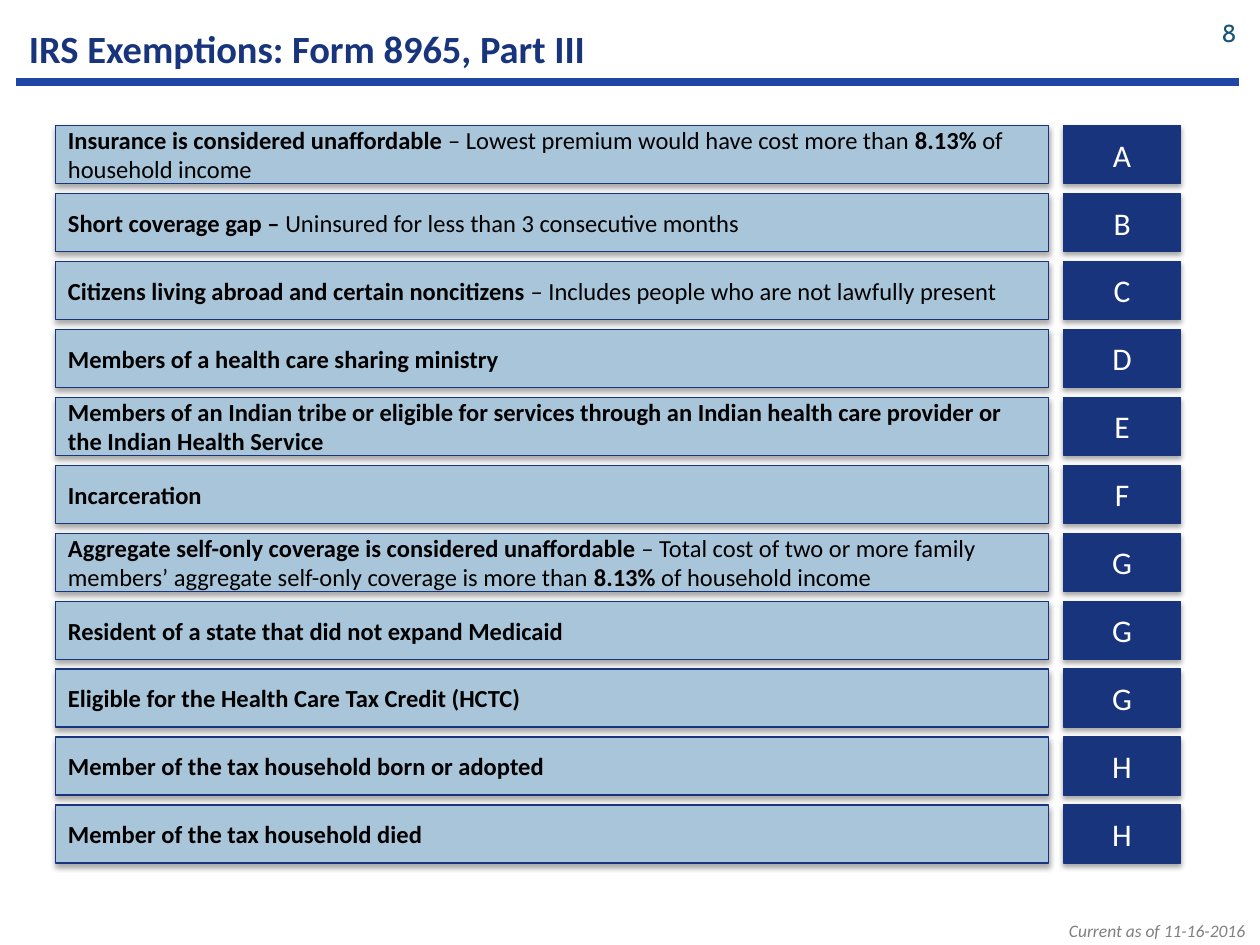
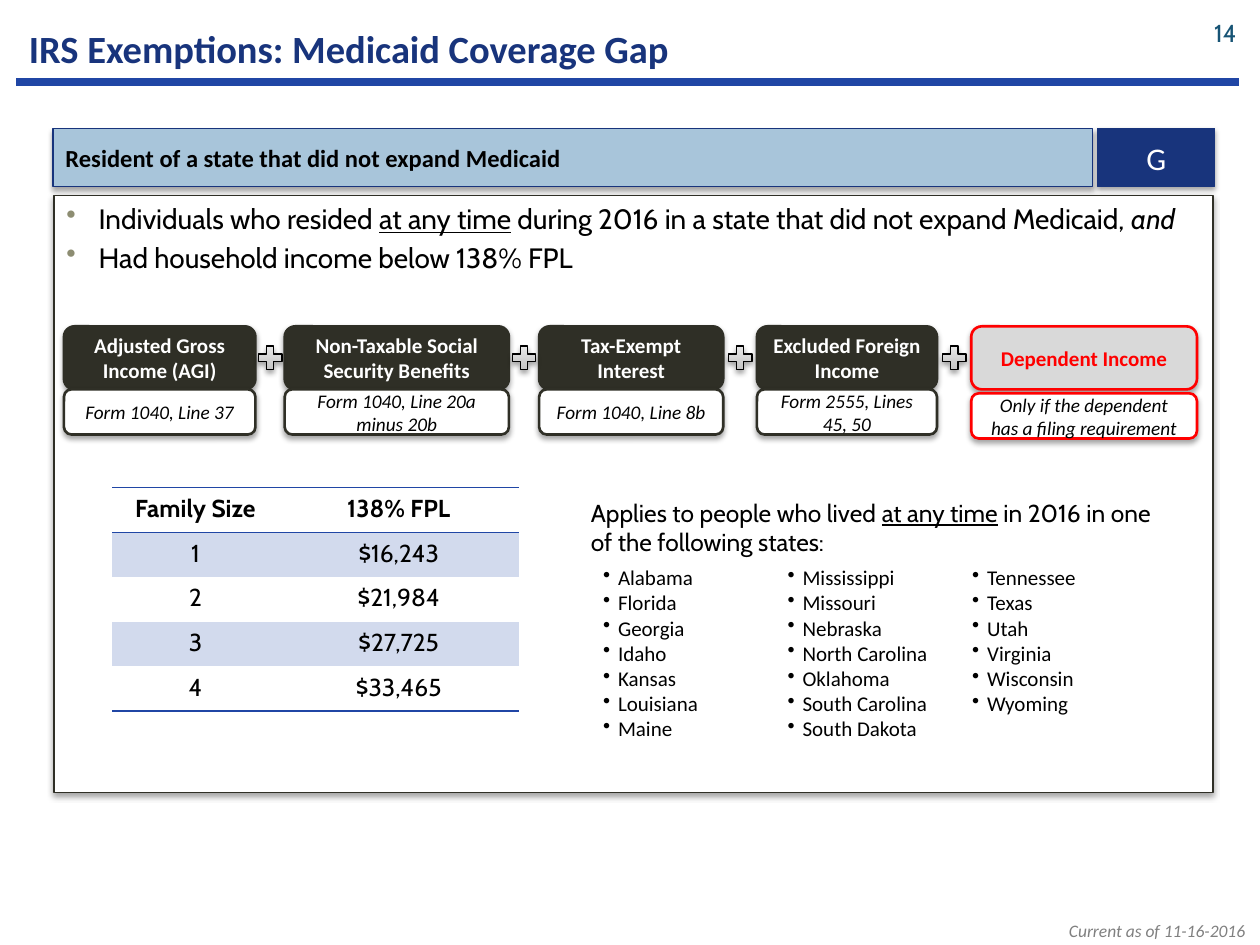
from typing import NamedTuple

from lxml import etree
from pptx import Presentation
from pptx.dml.color import RGBColor
from pptx.enum.shapes import MSO_CONNECTOR, MSO_SHAPE
from pptx.enum.text import MSO_ANCHOR, MSO_AUTO_SIZE, PP_ALIGN
from pptx.oxml.ns import qn
from pptx.util import Cm, Pt

RECTANGLE = MSO_SHAPE.RECTANGLE
ROUNDED = MSO_SHAPE.ROUNDED_RECTANGLE
PLUS = MSO_SHAPE.MATH_PLUS
STRAIGHT = MSO_CONNECTOR.STRAIGHT
LEFT, CENTER, RIGHT = PP_ALIGN.LEFT, PP_ALIGN.CENTER, PP_ALIGN.RIGHT
TOP, MIDDLE = MSO_ANCHOR.TOP, MSO_ANCHOR.MIDDLE
GROW = MSO_AUTO_SIZE.SHAPE_TO_FIT_TEXT

COLORS = {
    "navy": "18347C", "rule": "2046A5", "sky": "A8C5DA", "number": "175475",
    "gray": "808080", "dark": "2F2F26", "black": "000000", "white": "FFFFFF",
    "red": "FF0000", "silver": "D9D9D9", "bullet": "8D8D72", "stripe": "D2DAED",
    "plus_start": "BDBDBD", "plus_end": "EEEEEE",
}
FORMATS = {
    "title": {"name": "Calibri", "size": Pt(22), "bold": True, "color": "navy"},
    "number": {"name": "Cabin", "size": Pt(14), "color": "number"},
    "footer": {"name": "Calibri", "size": Pt(10), "italic": True, "color": "gray"},
    "exemption": {"name": "Calibri", "size": Pt(14), "color": "black"},
    "code": {"name": "Calibri", "size": Pt(18), "color": "white"},
    "criteria": {"name": "Cabin", "size": Pt(16), "color": "black"},
    "income": {"name": "Calibri", "size": Pt(12), "bold": True},
    "source": {"name": "Calibri", "size": Pt(11), "italic": True, "color": "black"},
    "cell": {"name": "Cabin", "size": Pt(14), "color": "black"},
    "states": {"name": "Calibri", "size": Pt(12), "color": "black"},
}
UNDERLINE = {"underline": True}
NO_STYLE = "{2D5ABB26-0587-4C30-8999-92F81FD0307C}"
ROW_HEIGHT, ROW_PITCH, CODE_WIDTH = 1.17, 1.37, 2.36

EXEMPTIONS = [
    ("A", ["Insurance is considered unaffordable ",
           "– Lowest premium would have cost more than ", "8.13%", " of household income"]),
    ("B", ["Short coverage gap – ", "Uninsured for less than 3 consecutive months"]),
    ("C", ["Citizens living abroad and certain noncitizens ",
           "– Includes people who are not lawfully present"]),
    ("D", ["Members of a health care sharing ministry"]),
    ("E", ["Members of an Indian tribe or eligible for services through an Indian "
           "health care provider or the Indian Health Service"]),
    ("F", ["Incarceration"]),
    ("G", ["Aggregate self-only coverage is considered unaffordable ",
           "– Total cost of two or more family members’ aggregate self-only coverage "
           "is more than ", "8.13% ", "of household income"]),
    ("G", ["Resident of a state that did not expand Medicaid"]),
    ("G", ["Eligible for the Health Care Tax Credit (HCTC)"]),
    ("H", ["Member of the tax household born or adopted"]),
    ("H", ["Member of the tax household died"]),
]
INCOMES = [
    (0, 3.86, "Adjusted Gross Income (AGI)", "Form 1040, Line 37"),
    (4.45, 4.52, "Non-Taxable Social Security Benefits", "Form 1040, Line 20a minus 20b"),
    (9.58, 3.71, "Tax-Exempt\nInterest", "Form 1040, Line 8b"),
    (13.97, 3.63, "Excluded Foreign Income", "Form 2555, Lines 45, 50"),
    (18.29, 4.55, "Dependent Income", "Only if the dependent has a filing requirement"),
]
POVERTY_LEVELS = [("Family Size", "138% FPL"), ("1", "$16,243"), ("2", "$21,984"),
                  ("3", "$27,725"), ("4", "$33,465")]
STATES = ["Alabama", "Florida", "Georgia", "Idaho", "Kansas", "Louisiana", "Maine",
          "Mississippi", "Missouri", "Nebraska", "North Carolina", "Oklahoma",
          "South Carolina", "South Dakota", "Tennessee", "Texas", "Utah", "Virginia",
          "Wisconsin", "Wyoming"]


class Box(NamedTuple):
    """A rectangle in centimetres."""
    left: float
    top: float
    width: float
    height: float

    def emu(self):
        """Return the four lengths for python-pptx."""
        return [Cm(length) for length in self]

    def inside(self, left, top, width, height):
        """Return a box offset from this one's corner."""
        return Box(self.left + left, self.top + top, width, height)


def rgb(name):
    """Look up a named colour."""
    return RGBColor.from_string(COLORS[name])


def apply_format(font, values):
    """Set font attributes from a dict of format values."""
    for name, value in values.items():
        if name == "color":
            font.color.rgb = rgb(value)
        else:
            setattr(font, name, value)


def write(frame, paragraphs, values, align=LEFT, anchor=MIDDLE):
    """Fill a text frame with paragraphs of (text, overrides) runs."""
    frame.word_wrap = True
    frame.vertical_anchor = anchor
    for index, runs in enumerate(paragraphs):
        paragraph = frame.add_paragraph() if index else frame.paragraphs[0]
        paragraph.alignment = align
        for text, overrides in runs:
            run = paragraph.add_run()
            run.text = text
            apply_format(run.font, {**values, **overrides})


def plain(text):
    """Turn lines of text into unstyled paragraphs."""
    return [[(line, {})] for line in text.split("\n")]


def add_bullets(frame, indent, color=None):
    """Give every paragraph a hanging round bullet."""
    for paragraph in frame.paragraphs:
        properties = paragraph._p.get_or_add_pPr()
        properties.set("marL", str(Cm(indent)))
        properties.set("indent", str(-Cm(indent)))
        if color:
            bullet_color = etree.SubElement(properties, qn("a:buClr"))
            etree.SubElement(bullet_color, qn("a:srgbClr"), val=COLORS[color])
        etree.SubElement(properties, qn("a:buChar"), char="•")


def add_text(slide, box, paragraphs, values, align=LEFT, anchor=TOP):
    """Add a text box and return its frame."""
    frame = slide.shapes.add_textbox(*box.emu()).text_frame
    write(frame, paragraphs, values, align, anchor)
    return frame


def add_block(slide, kind, box, fill, line, weight):
    """Add an outlined shape with a soft shadow below it."""
    shape = slide.shapes.add_shape(kind, *box.emu())
    if fill:
        shape.fill.solid()
        shape.fill.fore_color.rgb = rgb(fill)
    shape.line.color.rgb = rgb(line)
    shape.line.width = Pt(weight)
    shape.shadow.inherit = False
    effects = shape._element.spPr.find(qn("a:effectLst"))
    shadow = etree.SubElement(effects, qn("a:outerShdw"), blurRad=str(Pt(3.1)),
                              dist=str(Pt(1.8)), dir="5400000", rotWithShape="0")
    color = etree.SubElement(shadow, qn("a:srgbClr"), val=COLORS["black"])
    etree.SubElement(color, qn("a:alpha"), val="35000")
    return shape


def add_titled_slide(presentation, title, number):
    """Add a slide with the shared title, rule, number and footer."""
    slide = presentation.slides.add_slide(presentation.slide_layouts[5])
    placeholder = slide.shapes.title
    box = Box(0.33, 0.25, 22.86, 1.45)
    placeholder.left, placeholder.top, placeholder.width, placeholder.height = box.emu()
    write(placeholder.text_frame, plain(title), FORMATS["title"])
    rule = slide.shapes.add_connector(STRAIGHT, Cm(0.33), Cm(1.65), Cm(24.97), Cm(1.65))
    rule.line.color.rgb = rgb("rule")
    rule.line.width = Pt(4.75)
    etree.SubElement(rule._element.spPr, qn("a:effectLst"))
    add_text(slide, Box(23.88, 0.15, 1.3, 1.02), plain(number), FORMATS["number"],
             RIGHT, MIDDLE)
    add_text(slide, Box(15.16, 18.42, 10.19, 0.69), plain("Current as of 11-16-2016"),
             FORMATS["footer"], RIGHT)
    return slide


def add_exemption(slide, box, code, texts, gap):
    """Add an exemption, alternating bold and regular text, and its code."""
    label_width = box.width - gap - CODE_WIDTH
    label = add_block(slide, RECTANGLE, box.inside(0, 0, label_width, box.height),
                      "sky", "navy", 0.75)
    runs = [(text, {"bold": index % 2 == 0}) for index, text in enumerate(texts)]
    write(label.text_frame, [runs], FORMATS["exemption"])
    tag = add_block(slide, RECTANGLE,
                    box.inside(label_width + gap, 0, CODE_WIDTH, box.height),
                    "navy", "navy", 0.75)
    write(tag.text_frame, plain(code), FORMATS["code"], CENTER)


def add_criteria(slide, box):
    """Add the framed panel with the two criteria."""
    frame = add_block(slide, RECTANGLE, box, "white", "dark", 1).text_frame
    write(frame, [
        [("Individuals who resided ", {}), ("at any time", UNDERLINE),
         (" during 2016 in a state that did not expand Medicaid, ", {}),
         ("and", {"italic": True})],
        [("Had household income below 138% FPL", {})],
    ], FORMATS["criteria"], anchor=TOP)
    add_bullets(frame, 0.65, "bullet")
    frame.paragraphs[1].space_before = Pt(3)


def add_plus(slide, box):
    """Add a shaded plus sign."""
    shape = add_block(slide, PLUS, box, None, "black", 0.75)
    shape.fill.gradient()
    shape.fill.gradient_angle = 90
    for stop, color in zip(shape.fill.gradient_stops, ("plus_start", "plus_end")):
        stop.color.rgb = rgb(color)


def add_income_formula(slide, box):
    """Add the income parts, their sources and the plus signs between them."""
    head_height, note_height, plus_size = 1.27, 0.91, 0.65
    previous_right = None
    for left, width, income, source in INCOMES:
        dependent = income == "Dependent Income"
        fill, line, color = (("silver", "red", "red") if dependent
                             else ("dark", "dark", "white"))
        note_top = head_height + (0.08 if dependent else 0)
        head = add_block(slide, ROUNDED, box.inside(left, 0, width, head_height),
                         fill, line, 1.5)
        write(head.text_frame, plain(income), {**FORMATS["income"], "color": color}, CENTER)
        note = add_block(slide, ROUNDED, box.inside(left, note_top, width, note_height),
                         "white", line, 1.5)
        write(note.text_frame, plain(source), FORMATS["source"], CENTER)
        if previous_right is not None:
            add_plus(slide, box.inside((previous_right + left - plus_size) / 2,
                                       (head_height - plus_size) / 2, plus_size, plus_size))
        previous_right = left + width


def add_border(cell, side):
    """Draw one side of a table cell."""
    line = etree.SubElement(cell._tc.get_or_add_tcPr(), qn(f"a:{side}"), w=str(Pt(1)))
    fill = etree.SubElement(line, qn("a:solidFill"))
    etree.SubElement(fill, qn("a:srgbClr"), val=COLORS["rule"])


def add_poverty_table(slide, box):
    """Add the striped table of income limits by family size."""
    table = slide.shapes.add_table(len(POVERTY_LEVELS), 2, *box.emu()).table
    table._tbl.tblPr.find(qn("a:tableStyleId")).text = NO_STYLE
    table.first_row = table.horz_banding = False
    for column, share in zip(table.columns, (0.41, 0.59)):
        column.width = Cm(box.width * share)
    for row, texts in enumerate(POVERTY_LEVELS):
        for column, text in enumerate(texts):
            cell = table.cell(row, column)
            write(cell.text_frame, plain(text),
                  {**FORMATS["cell"], "bold": row == 0}, CENTER)
            if row == 0:
                add_border(cell, "lnT")
            if row in (0, len(POVERTY_LEVELS) - 1):
                add_border(cell, "lnB")
            if row % 2:
                cell.fill.solid()
                cell.fill.fore_color.rgb = rgb("stripe")
            else:
                cell.fill.background()


def add_states(slide, box):
    """Add the note on residence and the states in three columns."""
    note = [("Applies to people who lived ", {}), ("at any time", UNDERLINE),
            (" in 2016 in one of the following states:", {})]
    add_text(slide, box.inside(0, 0, box.width, 1.45), [note], FORMATS["cell"])
    frame = add_text(slide, box.inside(0.25, 1.35, 11.66, 3.84),
                     plain("\n".join(STATES)), FORMATS["states"])
    add_bullets(frame, 0.3)
    frame.auto_size = GROW
    frame._txBody.bodyPr.set("numCol", "3")


def build_exemption_list(presentation):
    """Build the slide that lists the exemptions."""
    slide = add_titled_slide(presentation, "IRS Exemptions: Form 8965, Part III", "8")
    first = Box(1.12, 2.53, 22.68, ROW_HEIGHT)
    for index, (code, texts) in enumerate(EXEMPTIONS):
        row = first._replace(top=first.top + index * ROW_PITCH)
        add_exemption(slide, row, code, texts, 0.3)


def build_coverage_gap(presentation):
    """Build the slide on the Medicaid coverage gap."""
    slide = add_titled_slide(presentation, "IRS Exemptions: Medicaid Coverage Gap", "14")
    add_exemption(slide, Box(1.07, 2.59, 23.42, ROW_HEIGHT), *EXEMPTIONS[7], 0.1)
    panel = Box(1.09, 3.94, 23.37, 12.04)
    add_criteria(slide, panel)
    add_income_formula(slide, panel.inside(0.2, 2.64, 22.84, 2.26))
    add_poverty_table(slide, panel.inside(1.17, 5.89, 8.2, 4.5))
    add_states(slide, panel.inside(10.57, 5.97, 11.86, 5.19))


def main():
    """Build and save the presentation."""
    presentation = Presentation()
    presentation.slide_width, presentation.slide_height = Cm(25.4), Cm(19.05)
    build_exemption_list(presentation)
    build_coverage_gap(presentation)
    presentation.save("out.pptx")


if __name__ == "__main__":
    main()
